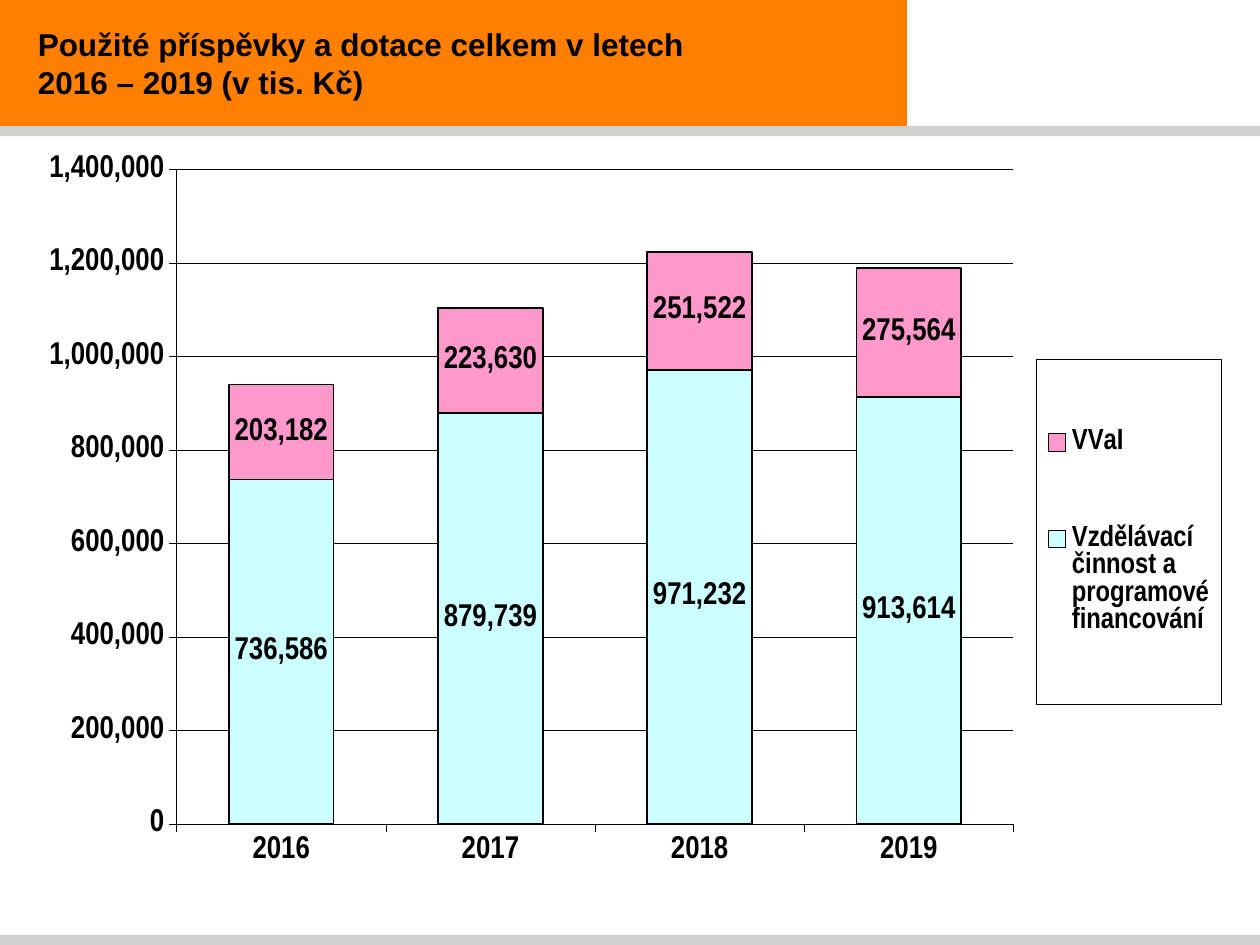
from typing import NamedTuple

import lxml.etree
import pptx
import pptx.chart.data
import pptx.dml.color
import pptx.enum.chart
import pptx.enum.shapes
import pptx.enum.text
import pptx.oxml
import pptx.oxml.ns
import pptx.util

RGBColor = pptx.dml.color.RGBColor
ORANGE = RGBColor(0xFF, 0x80, 0x01)
GREY = RGBColor(0xD0, 0xD0, 0xCE)
BLACK = RGBColor(0, 0, 0)
CYAN = RGBColor(0xCC, 0xFF, 0xFF)
PINK = RGBColor(0xFF, 0x99, 0xCC)

WIDTH, HEIGHT = pptx.util.Inches(10), pptx.util.Inches(7.5)
HEADER_W, HEADER_H = 0.72, 1 / 7.5
RULE_H = 0.08 / 7.5
CHART_FONT = "Arial Narrow"
NS = pptx.oxml.ns.nsdecls("c", "a")
qn = pptx.oxml.ns.qn


class Box(NamedTuple):
    x: float
    y: float
    w: float
    h: float

    def emu(self) -> tuple[int, int, int, int]:
        return (round(self.x * WIDTH), round(self.y * HEIGHT),
                round(self.w * WIDTH), round(self.h * HEIGHT))


class Band(NamedTuple):
    box: Box
    color: RGBColor


class Series(NamedTuple):
    name: str
    values: tuple[int, ...]
    color: RGBColor


HEADER = Box(0, 0, HEADER_W, HEADER_H)
BANDS = (
    Band(HEADER, ORANGE),
    Band(Box(0, 1 - RULE_H, 1, RULE_H), GREY),
    Band(Box(0, HEADER_H, 1, RULE_H), GREY),
)
CHART = Box(0.031, 0.164, 0.942, 0.793)
PLOT = Box(0.116, 0.019, 0.705, 0.874)
LEGEND = Box(0.84, 0.273, 0.156, 0.46)
YEARS = ("2016", "2017", "2018", "2019")
SERIES = (
    Series("Vzdělávací činnost a programové financování",
           (736586, 879739, 971232, 913614), CYAN),
    Series("VVaI", (203182, 223630, 251522, 275564), PINK),
)


def format_font(font, name: str, size: float) -> None:
    font.name = name
    font.size = pptx.util.Pt(size)
    font.bold = True
    font.color.rgb = BLACK


def format_line(line, width: float) -> None:
    line.color.rgb = BLACK
    line.width = pptx.util.Pt(width)


def write_text(sp, text: str, *, font: str, size: float, indent: float) -> None:
    tf = sp.text_frame
    tf.word_wrap = True
    tf.auto_size = pptx.enum.text.MSO_AUTO_SIZE.NONE
    tf.vertical_anchor = pptx.enum.text.MSO_ANCHOR.MIDDLE
    p = tf.paragraphs[0]
    p.text = text
    p.alignment = pptx.enum.text.PP_ALIGN.LEFT
    p_pr = p._p.get_or_add_pPr()
    p_pr.set("marL", str(pptx.util.Inches(indent)))
    p_pr.set("indent", "0")
    for r in p.runs:
        format_font(r.font, font, size)


def draw_band(slide, band: Band) -> None:
    sp = slide.shapes.add_shape(
        pptx.enum.shapes.MSO_SHAPE.RECTANGLE, *band.box.emu())
    sp.shadow.inherit = False
    sp.fill.solid()
    sp.fill.fore_color.rgb = band.color
    sp.line.fill.background()


def place(element, index: int, box: Box, *, inner: bool = False) -> None:
    for old in element.findall(qn("c:layout")):
        element.remove(old)
    target = '<c:layoutTarget val="inner"/>' if inner else ""
    modes = "".join(f'<c:{k}Mode val="edge"/>' for k in "xy")
    sizes = "".join(f'<c:{k} val="{v}"/>' for k, v in box._asdict().items())
    element.insert(index, pptx.oxml.parse_xml(
        f"<c:layout {NS}><c:manualLayout>{target}{modes}{sizes}"
        "</c:manualLayout></c:layout>"))


def format_axis(axis) -> None:
    format_font(axis.tick_labels.font, CHART_FONT, 18)
    format_line(axis.format.line, 0.25)
    axis.major_tick_mark = pptx.enum.chart.XL_TICK_MARK.OUTSIDE
    axis.minor_tick_mark = pptx.enum.chart.XL_TICK_MARK.NONE


def format_legend(chart) -> None:
    chart.has_legend = True
    legend = chart.legend
    legend.position = pptx.enum.chart.XL_LEGEND_POSITION.RIGHT
    legend.include_in_layout = False
    format_font(legend.font, CHART_FONT, 16.6)
    element = legend._element
    place(element, 1, LEGEND)
    element.find(qn("c:txPr")).addprevious(pptx.oxml.parse_xml(
        f'<c:spPr {NS}><a:solidFill><a:srgbClr val="FFFFFF"/></a:solidFill>'
        f'<a:ln w="{pptx.util.Pt(0.25)}"><a:solidFill><a:srgbClr val="{BLACK}"/>'
        "</a:solidFill></a:ln></c:spPr>"))


def draw_chart(slide) -> None:
    data = pptx.chart.data.CategoryChartData(number_format="#,##0")
    data.categories = YEARS
    for s in SERIES:
        data.add_series(s.name, s.values)
    chart = slide.shapes.add_chart(
        pptx.enum.chart.XL_CHART_TYPE.COLUMN_STACKED, *CHART.emu(), data).chart
    chart.has_title = False
    format_font(chart.font, CHART_FONT, 18)

    plot = chart.plots[0]
    plot.gap_width = 100
    plot.overlap = 100
    plot.vary_by_categories = False
    for series, s in zip(plot.series, SERIES):
        series.format.fill.solid()
        series.format.fill.fore_color.rgb = s.color
        format_line(series.format.line, 1)
        labels = series.data_labels
        labels.show_value = True
        labels.position = pptx.enum.chart.XL_LABEL_POSITION.CENTER
        format_font(labels.font, CHART_FONT, 18)

    format_axis(chart.category_axis)
    chart.category_axis.tick_label_position = pptx.enum.chart.XL_TICK_LABEL_POSITION.LOW
    axis = chart.value_axis
    format_axis(axis)
    axis.minimum_scale, axis.maximum_scale, axis.major_unit = 0, 1400000, 200000
    axis.tick_labels.number_format = "#,##0"
    axis.tick_labels.number_format_is_linked = False
    axis.has_major_gridlines = True
    format_line(axis.major_gridlines.format.line, 0.25)

    place(chart._chartSpace.chart.plotArea, 0, PLOT, inner=True)
    format_legend(chart)


def main() -> None:
    prs = pptx.Presentation()
    prs.slide_width, prs.slide_height = WIDTH, HEIGHT
    slide = prs.slides.add_slide(prs.slide_layouts[5])
    for band in BANDS:
        draw_band(slide, band)
    draw_chart(slide)

    title = slide.shapes.title
    title.left, title.top, title.width, title.height = HEADER.emu()
    write_text(title, "Použité příspěvky a dotace celkem v letech\v2016 – 2019 (v tis. Kč)",
               font="Arial", size=18, indent=0.2)
    slide.shapes._spTree.append(title._element)
    prs.save("out.pptx")


if __name__ == "__main__":
    main()
